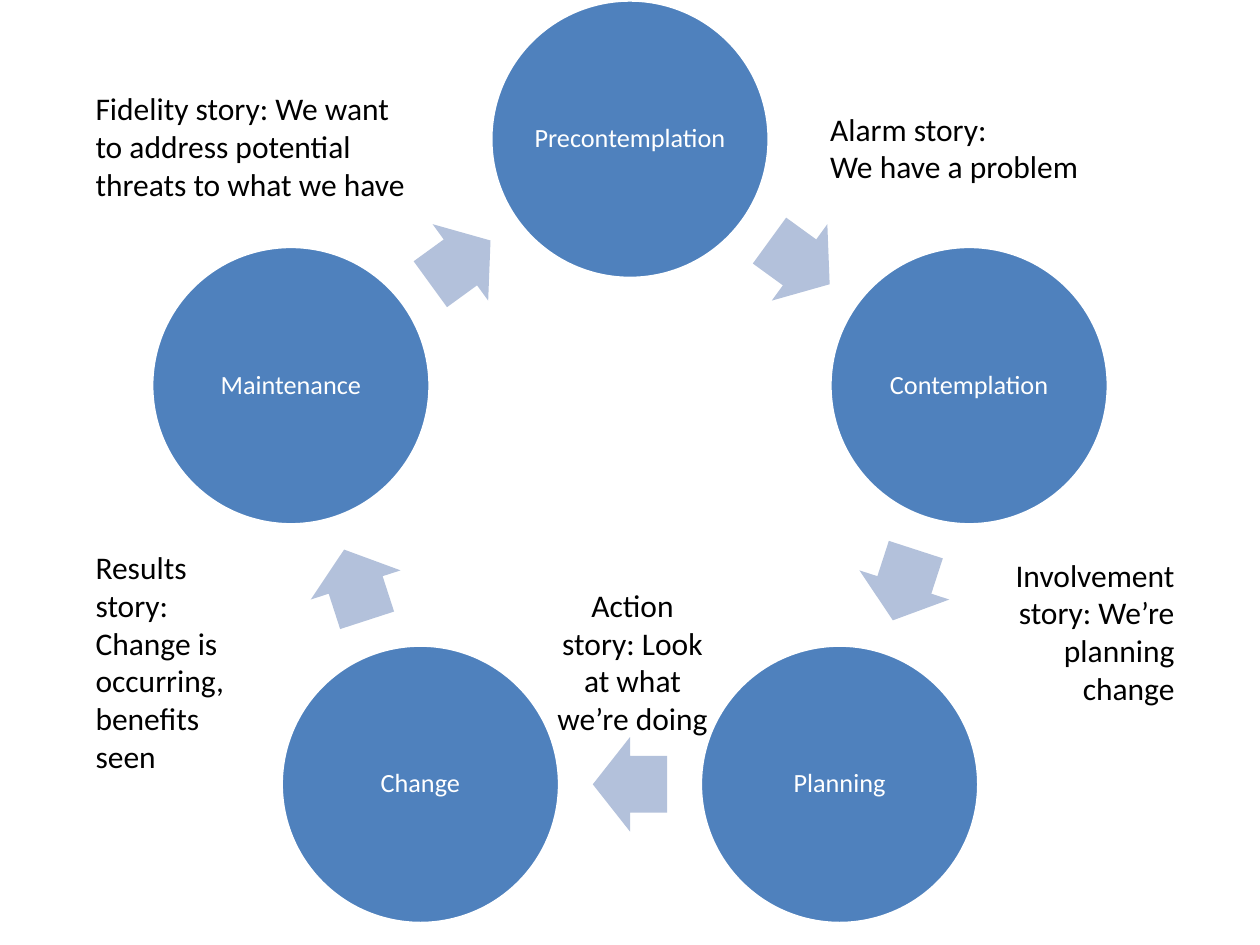
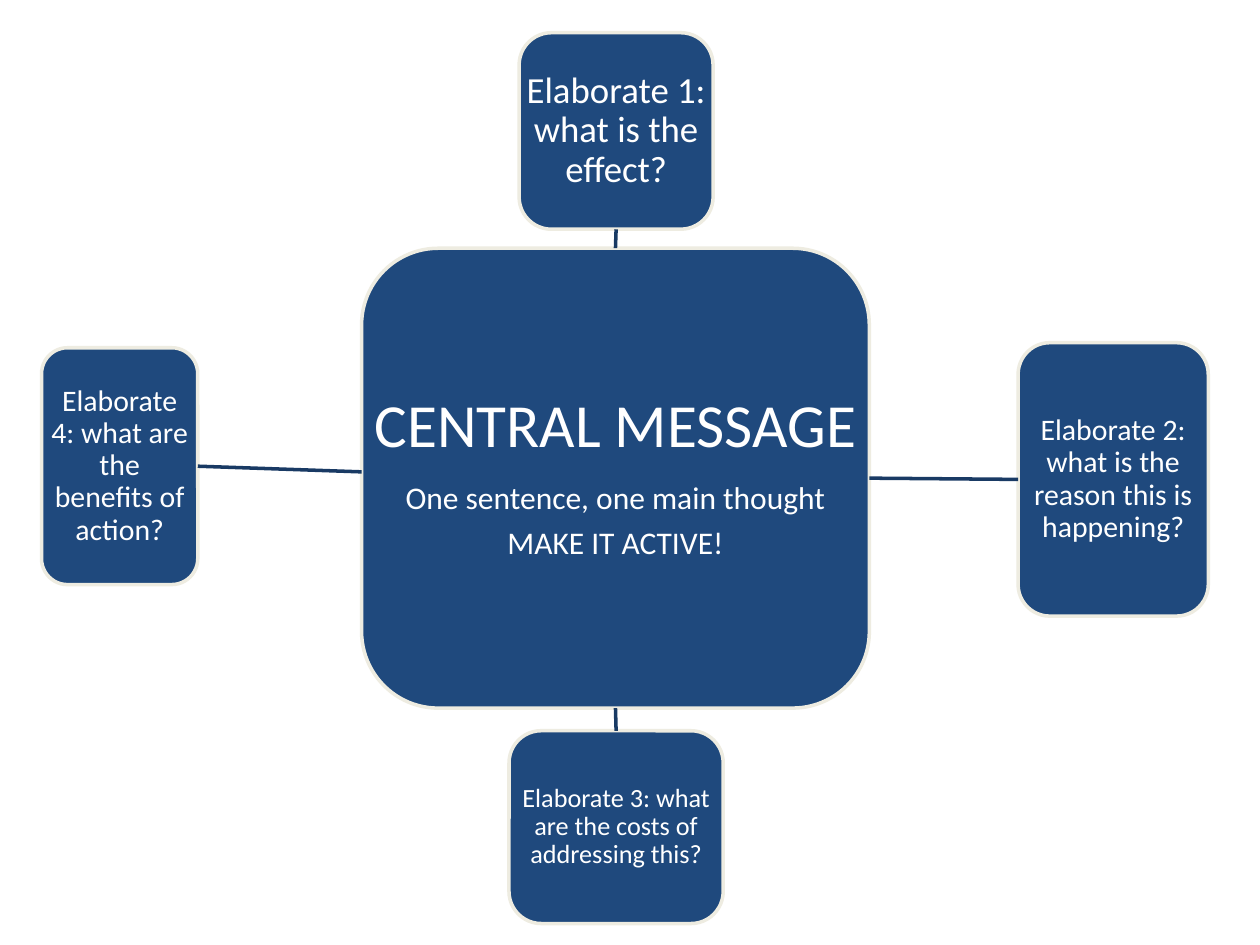
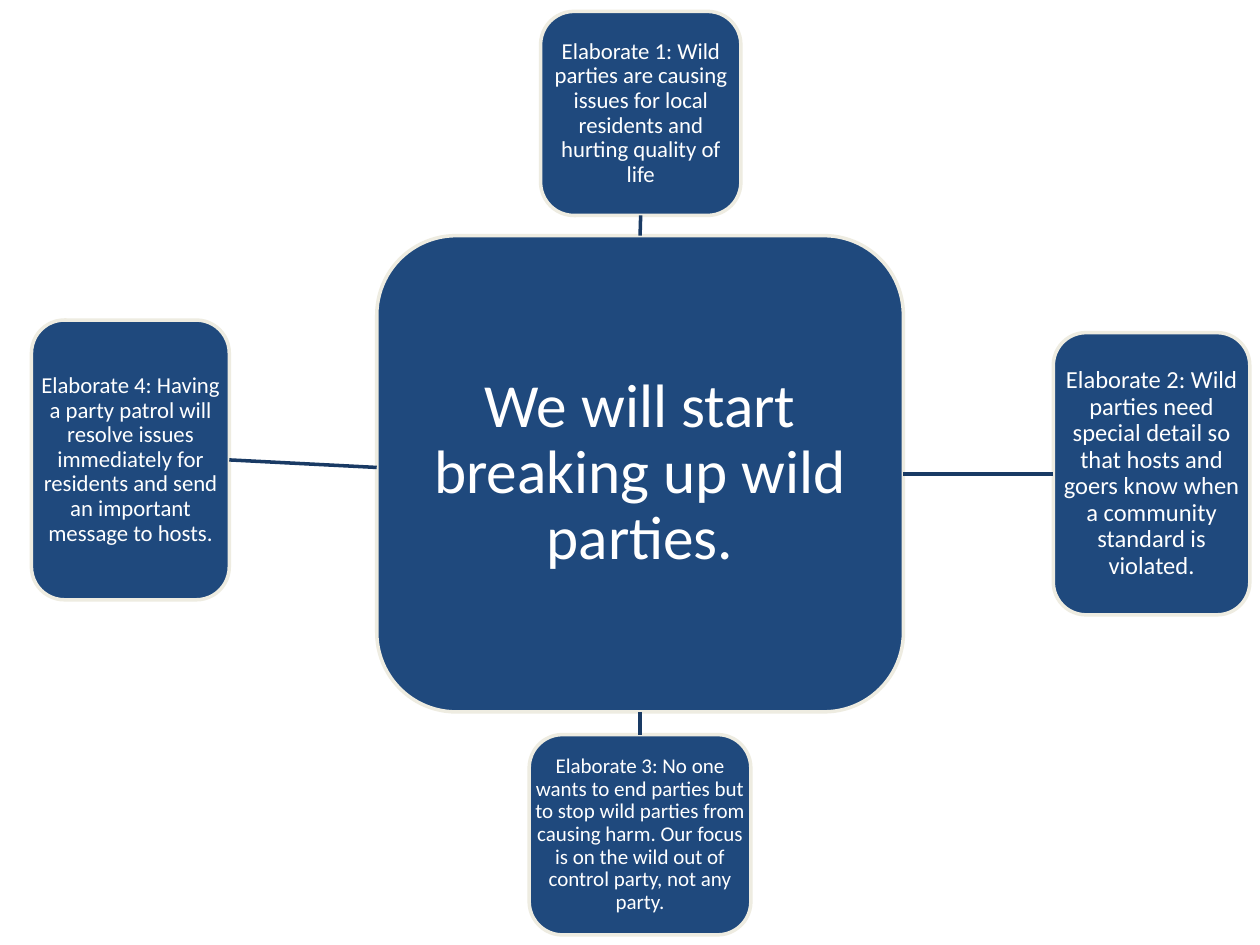
from dataclasses import dataclass
from math import cos, radians, sin

from lxml.etree import SubElement
from pptx import Presentation
from pptx.dml.color import RGBColor
from pptx.enum.shapes import MSO_CONNECTOR, MSO_SHAPE
from pptx.enum.text import MSO_ANCHOR, MSO_AUTO_SIZE, PP_ALIGN
from pptx.oxml.ns import qn
from pptx.util import Inches, Pt

WIDE, HIGH = Inches(10), Inches(7.5)
CELL = WIDE // 100  # the grid has 100 columns and 75 rows of square cells
TOP, LEFT, BOTTOM, RIGHT = range(4)


@dataclass(frozen=True)
class Theme:
    font: str = "Calibri"
    white: str = "FFFFFF"
    black: str = "000000"
    disc: str = "4F81BD"
    arrow: str = "B3C1DB"
    card: str = "1F497D"
    edge: str = "EEECE1"
    link: str = "193A64"
    stage: int = 15
    story: int = 18
    head: int = 35
    body: int = 18
    line: int = 2


THEME = Theme()

STAGES = ["Precontemplation", "Contemplation", "Planning", "Change", "Maintenance"]

STORIES = [
    ((64.9, 8.2, 21.9, 7.1), ["Alarm story:", "We have a problem"], PP_ALIGN.LEFT),
    ((75.8, 43.6, 18.4, 13.1), ["Involvement story: We’re planning change"], PP_ALIGN.RIGHT),
    ((6.6, 43, 14.2, 19.2), ["Results story: Change is occurring, benefits seen"], PP_ALIGN.LEFT),
    ((43.1, 46, 14.2, 13.1), ["Action story: Look at what we’re doing"], PP_ALIGN.CENTER),
    ((6.6, 6.6, 26.8, 10.1),
     ["Fidelity story: We want to address potential threats to what we have"], PP_ALIGN.LEFT),
]

# Each map: hub box, hub lines, then cards at top, right, bottom and left
MAPS = [
    ((28.7, 19.7, 40.3, 36.5),
     ["CENTRAL MESSAGE", "One sentence, one main thought", "MAKE IT ACTIVE!"],
     [((41.2, 2.6, 15.4, 15.6), "Elaborate 1: what is the effect?", 21),
      ((80.8, 27.2, 15.1, 21.7), "Elaborate 2: what is the reason this is happening?", 17),
      ((40.4, 58, 17, 15.3), "Elaborate 3: what are the costs of addressing this?", 15),
      ((3.3, 27.6, 12.4, 18.8), "Elaborate 4: what are the benefits of action?", 17)]),
    ((29.9, 18.7, 41.8, 37.8),
     ["We will start breaking up wild parties."],
     [((42.9, 0.9, 15.9, 16.2),
       "Elaborate 1: Wild parties are causing issues for local residents "
       "and hurting quality of life", 13),
      ((83.6, 26.4, 15.6, 22.4),
       "Elaborate 2: Wild parties need special detail so that hosts and goers "
       "know when a community standard is violated.", 14),
      ((42, 58.3, 17.6, 15.9),
       "Elaborate 3: No one wants to end parties but to stop wild parties from "
       "causing harm. Our focus is on the wild out of control party, not any party.", 12),
      ((2.5, 25.4, 15.7, 22.2),
       "Elaborate 4: Having a party patrol will resolve issues immediately for "
       "residents and send an important message to hosts.", 13)]),
]


def grid(*cells):
    return [round(cell * CELL) for cell in cells]


def write(frame, lines, sizes, color=THEME.white, align=PP_ALIGN.CENTER,
          anchor=MSO_ANCHOR.MIDDLE, wrap=True, inset=None, lead=None):
    """Fill a frame, one paragraph a line; lead sets tight lines with gaps between."""
    frame.word_wrap = wrap
    frame.vertical_anchor = anchor
    if inset is not None:
        frame.margin_left = frame.margin_right = inset
        frame.margin_top = frame.margin_bottom = inset
    for i, (line, size) in enumerate(zip(lines, sizes)):
        para = frame.paragraphs[0] if i == 0 else frame.add_paragraph()
        para.alignment = align
        if lead:
            para.line_spacing = lead
            if i < len(lines) - 1:
                para.space_after = Pt(0.35 * size)
        run = para.add_run()
        run.text = line
        run.font.name = THEME.font
        run.font.size = Pt(size)
        run.font.color.rgb = RGBColor.from_string(color)


def draw(slide, kind, box, fill, edge=None):
    shape = slide.shapes.add_shape(kind, *grid(*box))
    shape.shadow.inherit = False
    shape.fill.solid()
    shape.fill.fore_color.rgb = RGBColor.from_string(fill)
    if edge:
        shape.line.color.rgb = RGBColor.from_string(edge)
        shape.line.width = Pt(THEME.line)
    else:
        shape.line.fill.background()
    return shape


def spot(mid, reach, angle, size):
    """Box of a given size, centred at an angle clockwise from the top of a ring."""
    turn = radians(angle)
    wide, high = size
    return (mid[0] + reach * sin(turn) - wide / 2,
            mid[1] - reach * cos(turn) - high / 2, wide, high)


def ring(slide, names, mid=(50, 39.35), reach=28.3, disc=22.1, arrow=(5.9, 7.5)):
    step = 360 / len(names)
    for i, name in enumerate(names):
        box = spot(mid, reach, i * step, (disc, disc))
        shape = draw(slide, MSO_SHAPE.OVAL, box, THEME.disc, THEME.white)
        write(shape.text_frame, [name], [THEME.stage], wrap=False,
              inset=Pt(1.5), lead=0.9)
        angle = (i + 0.5) * step
        box = spot(mid, reach * cos(radians(step / 2)), angle, arrow)
        shape = draw(slide, MSO_SHAPE.RIGHT_ARROW, box, THEME.arrow)
        shape.adjustments[0], shape.adjustments[1] = 0.6, 0.5
        shape.rotation = angle


def story(slide, box, lines, align):
    frame = slide.shapes.add_textbox(*grid(*box)).text_frame
    write(frame, lines, [THEME.story] * len(lines), color=THEME.black,
          align=align, anchor=MSO_ANCHOR.TOP, wrap=len(lines) == 1)
    frame.auto_size = MSO_AUTO_SIZE.SHAPE_TO_FIT_TEXT


def card(slide, box, lines, sizes):
    """Rounded card whose text may use its full width, past the round corners."""
    shape = draw(slide, MSO_SHAPE.ROUNDED_RECTANGLE, box, THEME.card, THEME.edge)
    label = slide.shapes.add_textbox(*grid(*box))
    write(label.text_frame, lines, sizes, inset=Pt(0.2 * sizes[0]), lead=0.9)
    return shape


def link(slide, hub, leaf, side):
    """Join a side of the hub to the facing side of a leaf."""
    start = hub.left, hub.top + hub.height // 2 - CELL // 2
    line = slide.shapes.add_connector(MSO_CONNECTOR.STRAIGHT, *start, *start)
    if side != LEFT:  # the left link leaves just above the middle
        line.begin_connect(hub, side)
    line.end_connect(leaf, (side + 2) % 4)
    line.line.color.rgb = RGBColor.from_string(THEME.link)
    line.line.width = Pt(THEME.line)
    SubElement(line._element.spPr, qn("a:effectLst"))


def chart(slide, box, lines, leaves):
    sizes = [THEME.head] + [THEME.body] * (len(lines) - 1)
    hub = card(slide, box, lines, sizes)
    for side, (place, text, size) in zip((TOP, RIGHT, BOTTOM, LEFT), leaves):
        leaf = card(slide, place, [text], [size])
        link(slide, hub, leaf, side)


def main():
    deck = Presentation()
    deck.slide_width, deck.slide_height = WIDE, HIGH
    blank = deck.slide_layouts[6]

    cycle = deck.slides.add_slide(blank)
    ring(cycle, STAGES)
    for item in STORIES:
        story(cycle, *item)

    for item in MAPS:
        chart(deck.slides.add_slide(blank), *item)

    deck.save("out.pptx")


if __name__ == "__main__":
    main()
